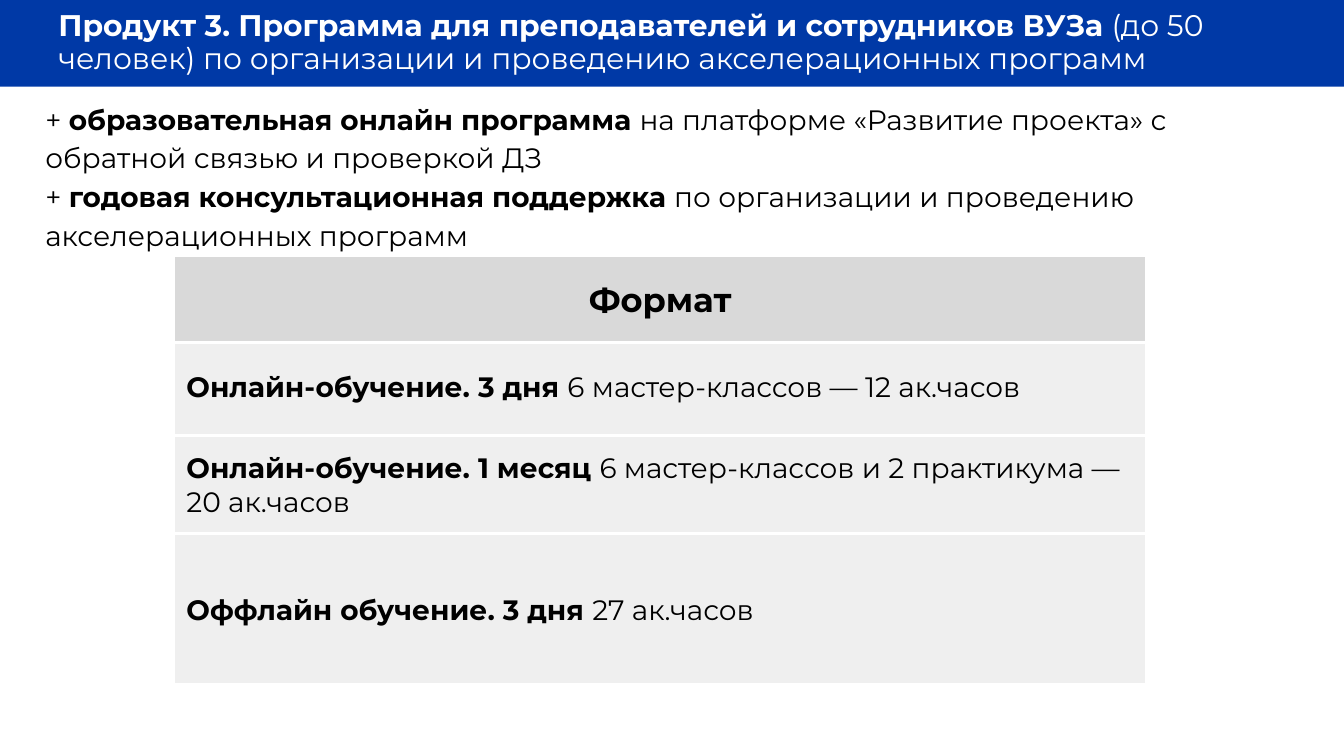
from dataclasses import dataclass

from pptx import Presentation
from pptx.dml.color import RGBColor
from pptx.enum.shapes import MSO_SHAPE
from pptx.enum.text import MSO_ANCHOR, PP_ALIGN
from pptx.shapes.autoshape import Shape
from pptx.slide import Slide
from pptx.util import Pt

COLORS = {
    "banner": "0039A6",
    "header": "D9D9D9",
    "row": "EFEFEF",
    "white": "FFFFFF",
    "black": "000000",
}
FONT = "Montserrat"
TABLE_LEFT, TABLE_WIDTH = 123.84, 695.52
ROWS_TOP = 241.2
INSET = 9.36


@dataclass(frozen=True)
class Span:
    text: str
    bold: bool = False


@dataclass(frozen=True)
class Area:
    left: float
    top: float
    width: float
    height: float


@dataclass(frozen=True)
class TextStyle:
    size: float = 20
    color: str = "black"
    align: PP_ALIGN = PP_ALIGN.LEFT
    line_spacing: float = 1.0
    insets: tuple[float, float, float, float] = (0, 0, 0, 0)


@dataclass(frozen=True)
class FormatRow:
    height: float
    name: str
    volume: str


TITLE = [[
    Span("Продукт 3. Программа для преподавателей и сотрудников ВУЗа", True),
    Span(" (до 50 человек) по организации и проведению акселерационных программ"),
]]
BENEFITS = [
    [
        Span("+ "),
        Span("образовательная онлайн программа ", True),
        Span("на платформе «Развитие проекта» с обратной связью и проверкой ДЗ"),
    ],
    [
        Span("+ "),
        Span("годовая консультационная поддержка ", True),
        Span("по организации и проведению акселерационных программ"),
    ],
]
FORMAT_ROWS = [
    FormatRow(69.84, "Онлайн-обучение. 3 дня ", "6 мастер-классов — 12 ак.часов"),
    FormatRow(69.84, "Онлайн-обучение. 1 месяц ", "6 мастер-классов и 2 практикума — 20 ак.часов"),
    FormatRow(108, "Оффлайн обучение. 3 дня ", "27 ак.часов"),
]


def color(name: str) -> RGBColor:
    return RGBColor.from_string(COLORS[name])


def write(box: Shape, paragraphs: list[list[Span]], style: TextStyle) -> None:
    frame = box.text_frame
    frame.word_wrap = True
    frame.vertical_anchor = MSO_ANCHOR.MIDDLE
    frame.margin_left, frame.margin_top, frame.margin_right, frame.margin_bottom = map(Pt, style.insets)
    for index, spans in enumerate(paragraphs):
        paragraph = frame.add_paragraph() if index else frame.paragraphs[0]
        paragraph.alignment = style.align
        paragraph.line_spacing = style.line_spacing
        for span in spans:
            run = paragraph.add_run()
            run.text = span.text
            run.font.name = FONT
            run.font.size = Pt(style.size)
            run.font.bold = span.bold
            run.font.color.rgb = color(style.color)


def add_text(page: Slide, area: Area, paragraphs: list[list[Span]], style: TextStyle) -> None:
    box = page.shapes.add_textbox(Pt(area.left), Pt(area.top), Pt(area.width), Pt(area.height))
    write(box, paragraphs, style)


def add_panel(page: Slide, area: Area, fill: str, outlined: bool = True) -> Shape:
    panel = page.shapes.add_shape(
        MSO_SHAPE.RECTANGLE, Pt(area.left), Pt(area.top), Pt(area.width), Pt(area.height)
    )
    panel.shadow.inherit = False
    panel.fill.solid()
    panel.fill.fore_color.rgb = color(fill)
    if outlined:
        panel.line.color.rgb = color("white")
        panel.line.width = Pt(2.25)
    else:
        panel.line.fill.background()
    return panel


def add_formats(page: Slide) -> None:
    top = ROWS_TOP
    for row in FORMAT_ROWS:
        panel = add_panel(page, Area(TABLE_LEFT, top, TABLE_WIDTH, row.height), "row")
        write(panel, [[Span(row.name, True), Span(row.volume)]], TextStyle(insets=(INSET, 0, 0, 0)))
        top += row.height
    header = add_panel(page, Area(TABLE_LEFT, 182.16, TABLE_WIDTH, 62.64), "header")
    write(header, [[Span("Формат", True)]], TextStyle(size=24, align=PP_ALIGN.CENTER))


def main() -> None:
    deck = Presentation()
    deck.slide_width, deck.slide_height = Pt(960), Pt(540)
    page = deck.slides.add_slide(deck.slide_layouts[6])
    add_panel(page, Area(0, 0, 960, 61.92), "banner", outlined=False)
    title_style = TextStyle(size=21.3, color="white", line_spacing=0.9, insets=(INSET,) * 4)
    add_text(page, Area(32.4, 0, 927.6, 61.92), TITLE, title_style)
    add_text(page, Area(32.4, 84.24, 878.4, 80.64), BENEFITS, TextStyle(line_spacing=1.15))
    add_formats(page)
    deck.save("out.pptx")


if __name__ == "__main__":
    main()
